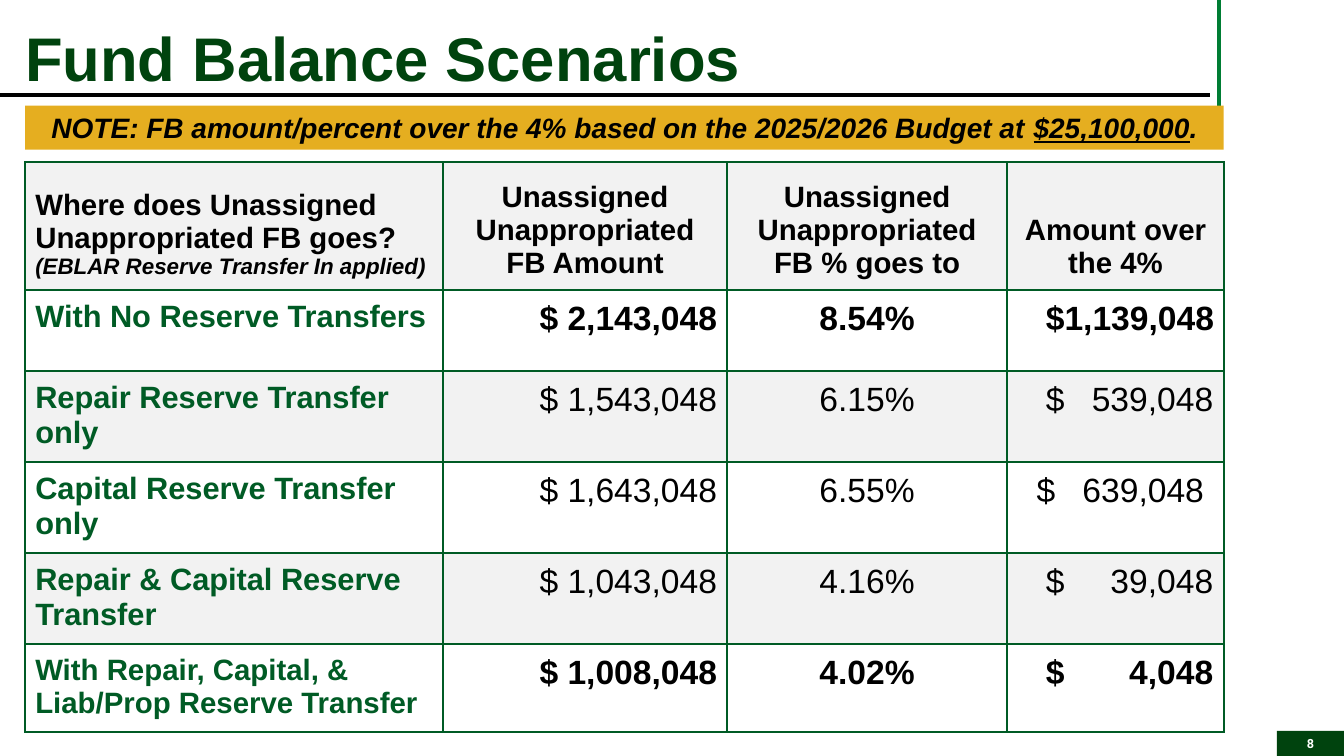
from lxml import etree
from pptx import Presentation
from pptx.dml.color import RGBColor
from pptx.enum import shapes, text
from pptx.oxml.ns import qn
from pptx.util import Pt

DARK_GREEN, GREEN, LINE_GREEN = "00430E", "005B25", "007D34"
BLACK, WHITE, GOLD, BAND = "000000", "FFFFFF", "E5AE20", "F2F2F2"
LEFT, CENTER, RIGHT = text.PP_ALIGN.LEFT, text.PP_ALIGN.CENTER, text.PP_ALIGN.RIGHT
TOP, MIDDLE, BOTTOM = (text.MSO_ANCHOR.TOP, text.MSO_ANCHOR.MIDDLE,
                       text.MSO_ANCHOR.BOTTOM)
CELL_MARGIN = 7.2
DOLLAR_INDENT = 20.6
AMOUNT_TAB = 119.5

COLUMN_WIDTHS = [298.4, 203, 200, 155]
ROW_HEIGHTS = [91, 58, 65, 65, 65, 63]
HEADINGS = ["Where does Unassigned Unappropriated FB goes?",
            "Unassigned Unappropriated FB Amount",
            "Unassigned Unappropriated FB % goes to",
            "Amount over the 4%"]
HEADING_NOTE = "\v(EBLAR Reserve Transfer In applied)"
# scenario, its size, balance, percent, amount over, bold figures, shift of amount
SCENARIOS = [
    ("With No Reserve Transfers", 22, "$ 2,143,048", "8.54%", "$1,139,048", True, 0),
    ("Repair Reserve Transfer only", 22, "$ 1,543,048", "6.15%", "$\t539,048", False, 0),
    ("Capital Reserve Transfer only", 22, "$ 1,643,048", "6.55%", "$\t639,048", False, 6.7),
    ("Repair & Capital Reserve Transfer", 22, "$ 1,043,048", "4.16%", "$\t39,048", False, 0),
    ("With Repair, Capital, & Liab/Prop Reserve Transfer", 21, "$ 1,008,048", "4.02%",
     "$\t4,048", True, 0),
]


def rgb(value):
    return RGBColor.from_string(value)


def write(frame, words, size=24, color=BLACK, bold=True, italic=False,
          underline=False, font="Arial", align=LEFT):
    """Append words to the first paragraph; a \\v becomes a line break."""
    paragraph = frame.paragraphs[0]
    paragraph.alignment = align
    if words.startswith("\v"):
        paragraph.add_line_break()
        words = words[1:]
    run = paragraph.add_run()
    run.text = words
    run.font.name, run.font.size = font, Pt(size)
    run.font.bold, run.font.italic, run.font.underline = bold, italic, underline
    run.font.color.rgb = rgb(color)


def add_line(slide, x1, y1, x2, y2, color):
    line = slide.shapes.add_connector(shapes.MSO_CONNECTOR.STRAIGHT,
                                      Pt(x1), Pt(y1), Pt(x2), Pt(y2))
    line.line.color.rgb, line.line.width = rgb(color), Pt(3)
    etree.SubElement(line._element.spPr, qn("a:effectLst"))


def add_panel(slide, box, color):
    panel = slide.shapes.add_shape(shapes.MSO_SHAPE.RECTANGLE, *map(Pt, box))
    panel.shadow.inherit = False
    panel.fill.solid()
    panel.fill.fore_color.rgb = rgb(color)
    panel.line.fill.background()
    frame = panel.text_frame
    frame.word_wrap, frame.vertical_anchor = True, MIDDLE
    return frame


def add_heading(slide, box):
    title = slide.shapes.title
    title.left, title.top, title.width, title.height = map(Pt, box)
    frame = title.text_frame
    frame.margin_left = frame.margin_top = frame.margin_bottom = 0
    frame.margin_right = Pt(CELL_MARGIN)
    frame.word_wrap, frame.vertical_anchor = True, BOTTOM
    frame.auto_size = text.MSO_AUTO_SIZE.NONE
    frame.paragraphs[0].line_spacing = 0.85
    write(frame, "Fund Balance Scenarios", size=44, color=DARK_GREEN)


def add_note(slide, box):
    frame = add_panel(slide, box, GOLD)
    note = dict(size=20, italic=True, align=CENTER)
    write(frame, "NOTE: FB amount/percent over the 4% based on the 2025/2026 Budget at ",
          **note)
    write(frame, "$25,100,000", underline=True, **note)
    write(frame, ".", **note)


def format_cell(cell, fill, anchor):
    cell.margin_left = cell.margin_right = Pt(CELL_MARGIN)
    cell.margin_top = cell.margin_bottom = Pt(CELL_MARGIN)
    cell.vertical_anchor = anchor
    properties = cell._tc.get_or_add_tcPr()
    for side in ("a:lnL", "a:lnR", "a:lnT", "a:lnB"):
        border = etree.SubElement(properties, qn(side), w=str(Pt(1.5)))
        solid = etree.SubElement(border, qn("a:solidFill"))
        etree.SubElement(solid, qn("a:srgbClr"), val=GREEN)
    if fill:
        cell.fill.solid()
        cell.fill.fore_color.rgb = rgb(fill)
    else:
        cell.fill.background()


def write_amount(cell, amount, bold, shift):
    """Right-align the amount; a tab sets the dollar sign apart from the digits."""
    if "\t" not in amount:
        write(cell.text_frame, amount, bold=bold, align=RIGHT)
        return
    cell.margin_left = Pt(CELL_MARGIN + DOLLAR_INDENT - shift)
    cell.margin_right = Pt(CELL_MARGIN + shift)
    tabs = etree.SubElement(cell.text_frame.paragraphs[0]._p.get_or_add_pPr(),
                            qn("a:tabLst"))
    etree.SubElement(tabs, qn("a:tab"), pos=str(Pt(AMOUNT_TAB)), algn="r")
    write(cell.text_frame, amount, bold=bold)


def add_scenarios(slide, left, top):
    table = slide.shapes.add_table(
        len(ROW_HEIGHTS), len(COLUMN_WIDTHS), Pt(left), Pt(top),
        Pt(sum(COLUMN_WIDTHS)), Pt(sum(ROW_HEIGHTS))).table
    table.horz_banding = False
    for column, width in zip(table.columns, COLUMN_WIDTHS):
        column.width = Pt(width)
    for index, (row, height) in enumerate(zip(table.rows, ROW_HEIGHTS)):
        row.height = Pt(height)
        for cell in row.cells:
            format_cell(cell, None if index % 2 else BAND, TOP if index else BOTTOM)

    for index, heading in enumerate(HEADINGS):
        write(table.cell(0, index).text_frame, heading, size=21,
              align=CENTER if index else LEFT)
    write(table.cell(0, 0).text_frame, HEADING_NOTE, size=16, italic=True)

    for index, scenario in enumerate(SCENARIOS, 1):
        name, size, balance, percent, over, bold, shift = scenario
        name_cell, balance_cell, percent_cell, over_cell = table.rows[index].cells
        write(name_cell.text_frame, name, size=size, color=GREEN)
        write(balance_cell.text_frame, balance, bold=bold, align=RIGHT)
        write(percent_cell.text_frame, percent, bold=bold, align=CENTER)
        write_amount(over_cell, over, bold, shift)


def add_page_number(slide, box):
    write(add_panel(slide, box, DARK_GREEN), "8", size=9, color=WHITE,
          font="Roboto", align=CENTER)


def main():
    deck = Presentation()
    deck.slide_width, deck.slide_height = Pt(960), Pt(540)
    slide = deck.slides.add_slide(deck.slide_layouts[5])
    add_line(slide, 870.5, 0, 870.5, 77, LINE_GREEN)
    add_heading(slide, (18, 10, 816.5, 57))
    add_scenarios(slide, 18, 116)
    add_line(slide, 0, 67.7, 864, 67.7, BLACK)
    add_page_number(slide, (912, 522, 48, 18))
    add_note(slide, (18, 75.5, 856, 31.5))
    deck.save("out.pptx")


if __name__ == "__main__":
    main()
